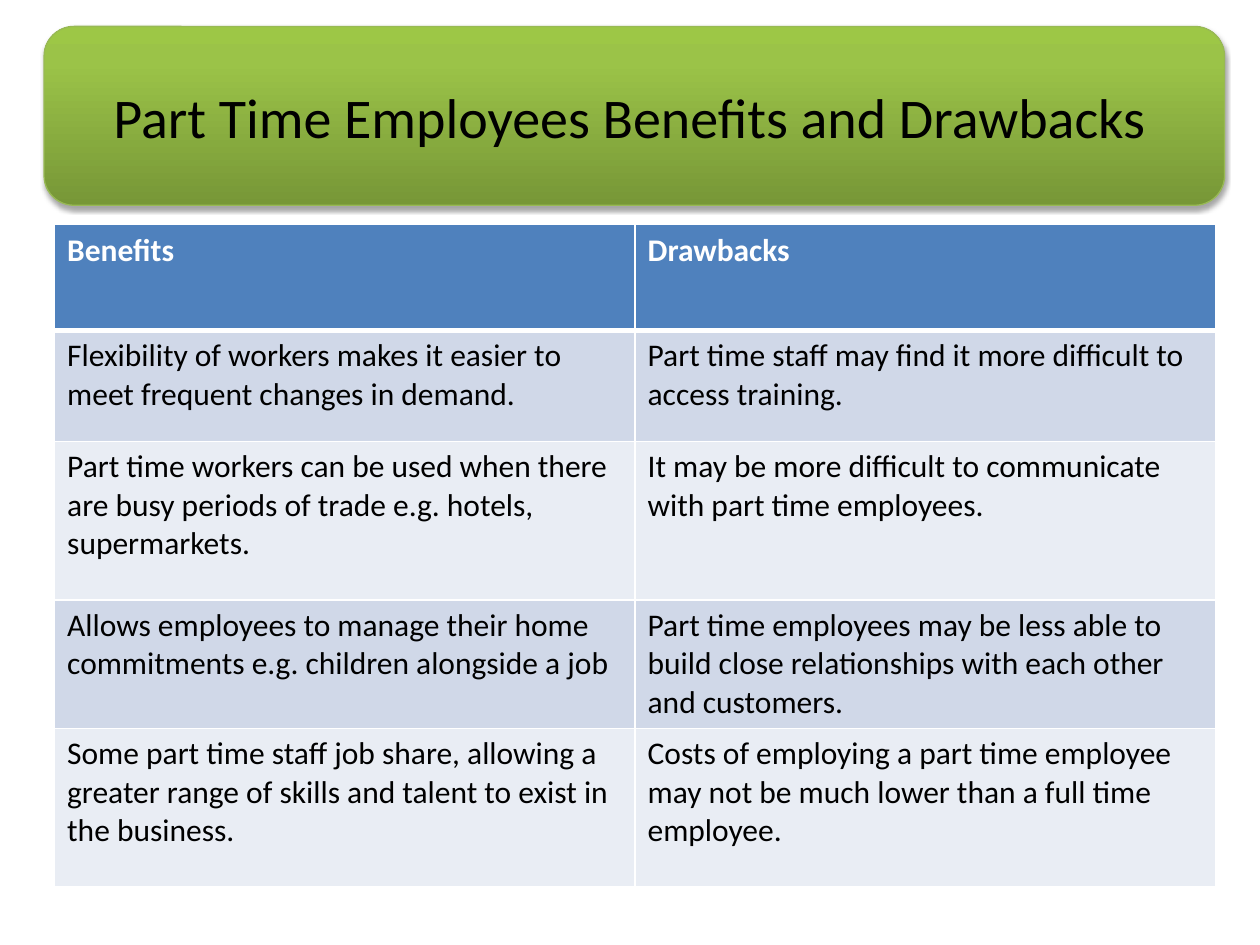
from dataclasses import dataclass
from typing import NamedTuple

from lxml.etree import SubElement
from pptx import Presentation
from pptx.dml.color import RGBColor as Rgb
from pptx.enum.shapes import MSO_SHAPE as Preset
from pptx.enum.text import MSO_ANCHOR as Anchor, PP_ALIGN as Align
from pptx.oxml.ns import qn
from pptx.util import Pt


@dataclass(frozen=True)
class Theme:
    font: str = "Calibri"
    title_size: int = 32
    body_size: int = 18
    text: str = "000000"
    white: str = "FFFFFF"
    banner_stops: tuple = ((0, "779737"), (80, "9BC348"), (100, "9DC746"))
    banner_line: str = "98B955"
    shadow: str = "000000"
    header: str = "4F81BD"
    bands: tuple = ("D0D8E8", "E9EDF4")
    rule: float = 1
    header_rule: float = 3


class Box(NamedTuple):
    left: float
    top: float
    width: float
    height: float

    def lengths(self) -> list:
        return [Pt(value) for value in self]


class Comparison(NamedTuple):
    benefit: str
    drawback: str
    height: float


THEME = Theme()
BANNER = Box(25.2, 15.1, 674.6, 102.2)
TITLE = Box(36, 21.6, 648, 90)
TABLE = Box(31.2, 128.4, 663.4, 378.5)

ROWS = [
    Comparison("Benefits", "Drawbacks", 60.5),
    Comparison(
        "Flexibility of workers makes it easier to meet frequent changes in demand.",
        "Part time staff may find it more difficult to access training.",
        63.4,
    ),
    Comparison(
        "Part time workers can be used when there are busy periods of trade e.g. hotels, supermarkets.",
        "It may be more difficult to communicate with part time employees.",
        90.7,
    ),
    Comparison(
        "Allows employees to manage their home commitments e.g. children alongside a job",
        "Part time employees may be less able to build close relationships with each other and customers.",
        73.2,
    ),
    Comparison(
        "Some part time staff job share, allowing a greater range of skills and talent to exist in the business.",
        "Costs of employing a part time employee may not be much lower than a full time employee.",
        90.7,
    ),
]


def add_run(paragraph, words: str, size: float, color: str, bold: bool = False) -> None:
    run = paragraph.add_run()
    run.text = words
    run.font.name = THEME.font
    run.font.size = Pt(size)
    run.font.bold = bold
    run.font.color.rgb = Rgb.from_string(color)


def add_color(parent, color: str):
    return SubElement(parent, qn("a:srgbClr"), val=color)


def draw_banner(slide, box: Box) -> None:
    banner = slide.shapes.add_shape(Preset.ROUNDED_RECTANGLE, *box.lengths())
    banner.line.color.rgb = Rgb.from_string(THEME.banner_line)
    banner.line.width = Pt(0.75)
    banner.fill.gradient()
    banner.fill.gradient_angle = 90
    properties = banner.element.spPr
    stops = properties.find(".//" + qn("a:gsLst"))
    for stop in list(stops):
        stops.remove(stop)
    for percent, color in THEME.banner_stops:
        add_color(SubElement(stops, qn("a:gs"), pos=str(percent * 1000)), color)
    banner.shadow.inherit = False
    shadow = SubElement(
        properties.find(qn("a:effectLst")), qn("a:outerShdw"),
        blurRad=str(Pt(3.1)), dist=str(Pt(1.8)), dir="5400000", rotWithShape="0",
    )
    SubElement(add_color(shadow, THEME.shadow), qn("a:alpha"), val="35000")


def draw_title(slide, box: Box, words: str) -> None:
    frame = slide.shapes.add_textbox(*box.lengths()).text_frame
    frame.word_wrap = True
    frame.vertical_anchor = Anchor.MIDDLE
    heading = frame.paragraphs[0]
    heading.alignment = Align.CENTER
    add_run(heading, words, THEME.title_size, THEME.text)


def set_borders(cell, top: float, bottom: float) -> None:
    properties = cell._tc.get_or_add_tcPr()
    widths = {"L": THEME.rule, "R": THEME.rule, "T": top, "B": bottom}
    for side, width in widths.items():
        line = SubElement(properties, qn(f"a:ln{side}"), w=str(Pt(width)))
        add_color(SubElement(line, qn("a:solidFill")), THEME.white)


def draw_table(slide, box: Box, rows: list[Comparison]) -> None:
    table = slide.shapes.add_table(len(rows), 2, *box.lengths()).table
    for column in table.columns:
        column.width = Pt(box.width / 2)
    for index, row in enumerate(rows):
        table.rows[index].height = Pt(row.height)
        is_header = index == 0
        fill = THEME.header if is_header else THEME.bands[(index - 1) % 2]
        color = THEME.white if is_header else THEME.text
        top = THEME.header_rule if index == 1 else THEME.rule
        bottom = THEME.header_rule if is_header else THEME.rule
        for side, words in enumerate((row.benefit, row.drawback)):
            cell = table.cell(index, side)
            set_borders(cell, top, bottom)
            cell.fill.solid()
            cell.fill.fore_color.rgb = Rgb.from_string(fill)
            add_run(cell.text_frame.paragraphs[0], words, THEME.body_size, color, is_header)


def main() -> None:
    deck = Presentation()
    deck.slide_width, deck.slide_height = Pt(720), Pt(540)
    slide = deck.slides.add_slide(deck.slide_layouts[6])
    draw_banner(slide, BANNER)
    draw_title(slide, TITLE, "Part Time Employees Benefits and Drawbacks")
    draw_table(slide, TABLE, ROWS)
    deck.save("out.pptx")


if __name__ == "__main__":
    main()
